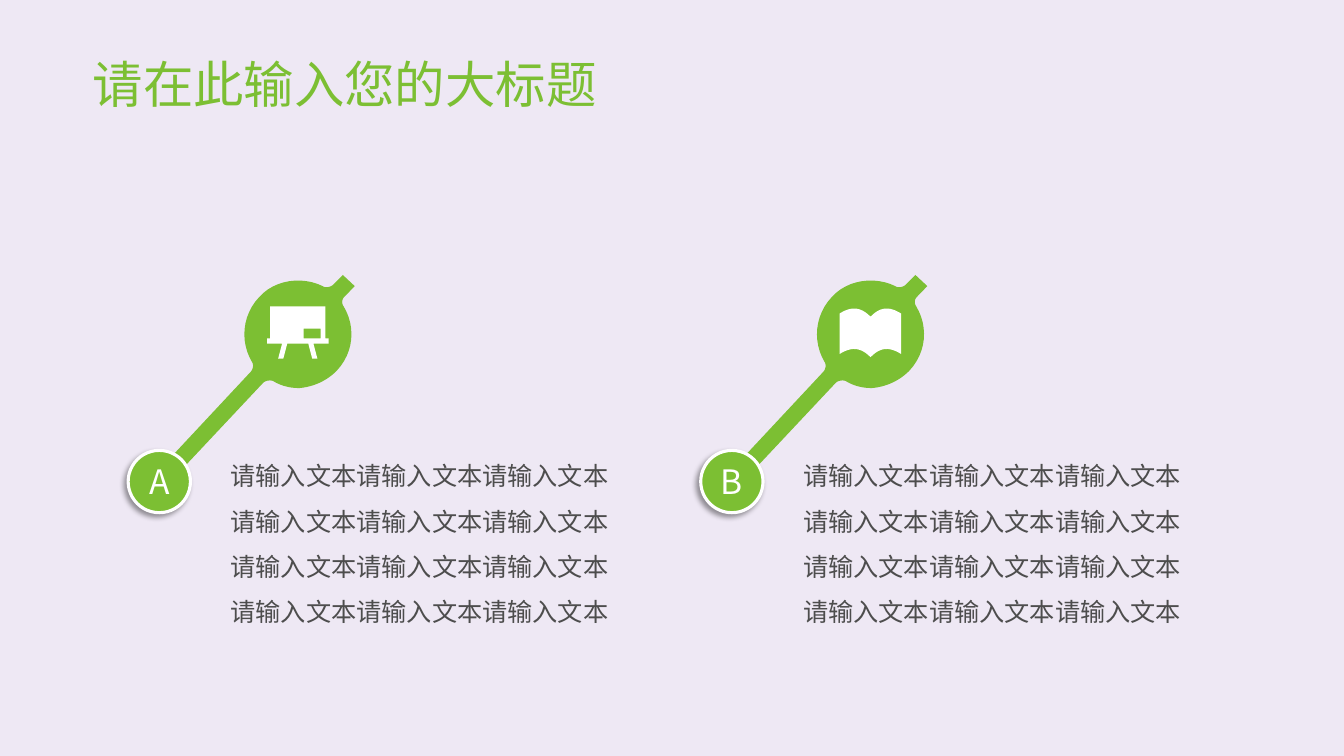
"""Build a slide with two lettered signposts, each with an icon and a text block."""
from dataclasses import dataclass

from lxml.etree import SubElement
from pptx import Presentation
from pptx.dml.color import RGBColor
from pptx.enum.shapes import MSO_SHAPE as Preset
from pptx.enum.text import MSO_ANCHOR as Anchor, PP_ALIGN as Align
from pptx.oxml.ns import qn
from pptx.shapes.autoshape import Shape
from pptx.slide import Slide
from pptx.util import Cm, Pt

GREEN = RGBColor(0x7C, 0xBF, 0x33)
LILAC = RGBColor(0xEE, 0xE8, 0xF4)
WHITE = RGBColor(0xFF, 0xFF, 0xFF)
GREY = RGBColor(0x4D, 0x4D, 0x4D)
FONT = "Noto Sans CJK SC"
CURVE_STEPS = 12

Segment = tuple[float, ...]
Contour = list[Segment]

STEM: list[Contour] = [[
    (8.48, 9.35),
    (8.92, 8.89, 8.97, 8.23, 8.66, 7.72),
    (8.61, 7.65, 8.61, 7.54, 8.69, 7.47),
    (8.94, 7.21), (8.64, 6.93), (8.38, 7.19),
    (8.31, 7.24, 8.2, 7.26, 8.13, 7.21),
    (7.62, 6.96, 6.93, 7.04, 6.53, 7.49),
    (6.1, 7.95, 6.05, 8.61, 6.35, 9.12),
    (6.4, 9.19, 6.38, 9.3, 6.32, 9.37),
    (4.32, 11.51), (4.62, 11.79), (6.63, 9.65),
    (6.71, 9.58, 6.81, 9.58, 6.88, 9.6),
    (7.09, 9.73, 7.32, 9.78, 7.54, 9.78),
    (7.9, 9.75, 8.23, 9.6, 8.48, 9.35),
]]
BOARD: list[Contour] = [
    [(8.28, 8.53), (8.2, 8.53), (8.2, 7.72), (6.81, 7.72), (6.81, 8.53), (6.73, 8.53),
     (6.73, 8.66), (7.11, 8.66), (7.01, 9.04), (7.14, 9.04), (7.24, 8.66), (7.77, 8.66),
     (7.87, 9.04), (8.0, 9.04), (7.9, 8.66), (8.28, 8.66)],
    [(8.08, 8.53), (7.65, 8.53), (7.65, 8.28), (8.08, 8.28)],
]
BOOK: list[Contour] = [[
    (6.73, 7.9),
    (7.02, 7.72, 7.25, 7.72, 7.51, 7.98),
    (7.76, 7.72, 7.99, 7.72, 8.28, 7.9),
    (8.28, 8.92),
    (7.99, 8.74, 7.76, 8.74, 7.51, 9.0),
    (7.25, 8.74, 7.02, 8.74, 6.73, 8.92),
]]


@dataclass(frozen=True)
class Signpost:
    """A lettered signpost, moved right by its shift in centimetres."""
    letter: str
    icon: list[Contour]
    shift: float
    body: str = "请输入文本" * 12


SIGNPOSTS = [Signpost("A", BOARD, 0), Signpost("B", BOOK, 14.43)]


def flatten(contour: Contour) -> list[tuple[float, float]]:
    """Turn straight and cubic segments into a list of points."""
    points = [contour[0]]
    for segment in contour[1:]:
        if len(segment) == 2:
            points.append(segment)
            continue
        x0, y0 = points[-1]
        x1, y1, x2, y2, x3, y3 = segment
        for step in range(1, CURVE_STEPS + 1):
            t = step / CURVE_STEPS
            a, b, c, d = (1 - t) ** 3, 3 * t * (1 - t) ** 2, 3 * t * t * (1 - t), t ** 3
            points.append((a * x0 + b * x1 + c * x2 + d * x3,
                           a * y0 + b * y1 + c * y2 + d * y3))
    return points


def draw_outline(slide: Slide, contours: list[Contour], shift: float, color: RGBColor) -> None:
    """Draw a filled outline made of one or more closed contours."""
    outlines = [[(Cm(x + shift), Cm(y)) for x, y in flatten(contour)] for contour in contours]
    builder = slide.shapes.build_freeform(*outlines[0][0])
    builder.add_line_segments(outlines[0][1:], close=True)
    for hole in outlines[1:]:
        builder.move_to(*hole[0])
        builder.add_line_segments(hole[1:], close=True)
    outline = builder.convert_to_shape()
    outline.fill.solid()
    outline.fill.fore_color.rgb = color
    outline.line.fill.background()
    outline.shadow.inherit = False


def write(holder: Shape, text: str, size: int, color: RGBColor, align: Align, spacing: float) -> None:
    """Set and format the single paragraph of a shape."""
    frame = holder.text_frame
    frame.text = text
    frame.vertical_anchor = Anchor.MIDDLE
    paragraph = frame.paragraphs[0]
    paragraph.alignment = align
    paragraph.line_spacing = spacing
    run = paragraph.runs[0]
    run.font.size = Pt(size)
    run.font.name = FONT
    run.font.color.rgb = color
    SubElement(run.font._element, qn("a:ea"), typeface=FONT)


def cast_shadow(shape: Shape) -> None:
    """Give a shape a soft shadow towards the lower left."""
    shape.shadow.inherit = False
    effects = shape._element.spPr.find(qn("a:effectLst"))
    shadow = SubElement(effects, qn("a:outerShdw"), blurRad=str(Pt(4)), dist=str(Pt(3)),
                        dir="8100000", algn="tr", rotWithShape="0")
    black = SubElement(shadow, qn("a:srgbClr"), val="000000")
    SubElement(black, qn("a:alpha"), val="40000")


def draw_signpost(slide: Slide, signpost: Signpost) -> None:
    """Draw the stem, badge, icon and text of one signpost."""
    draw_outline(slide, STEM, signpost.shift, GREEN)
    badge = slide.shapes.add_shape(Preset.OVAL, Cm(3.23 + signpost.shift), Cm(11.35),
                                   Cm(1.57), Cm(1.57))
    badge.fill.solid()
    badge.fill.fore_color.rgb = GREEN
    badge.line.color.rgb = WHITE
    badge.line.width = Pt(2.25)
    cast_shadow(badge)
    write(badge, signpost.letter, 24, WHITE, Align.CENTER, 1)
    badge.text_frame.word_wrap = False
    draw_outline(slide, signpost.icon, signpost.shift, WHITE)
    body = slide.shapes.add_textbox(Cm(5.31 + signpost.shift), Cm(10.64), Cm(10.52), Cm(5.74))
    body.text_frame.word_wrap = True
    write(body, signpost.body, 18, GREY, Align.CENTER, 1.5)


def main() -> None:
    """Build and save the presentation."""
    deck = Presentation()
    deck.slide_width, deck.slide_height = Cm(33.87), Cm(19.05)
    slide = deck.slides.add_slide(deck.slide_layouts[5])
    slide.background.fill.solid()
    slide.background.fill.fore_color.rgb = LILAC
    heading = slide.shapes.title
    heading.left, heading.top, heading.width, heading.height = Cm(2.08), Cm(1.02), Cm(28.73), Cm(2.36)
    write(heading, "请在此输入您的大标题", 36, GREEN, Align.LEFT, 0.9)
    for signpost in SIGNPOSTS:
        draw_signpost(slide, signpost)
    deck.save("out.pptx")


if __name__ == "__main__":
    main()
